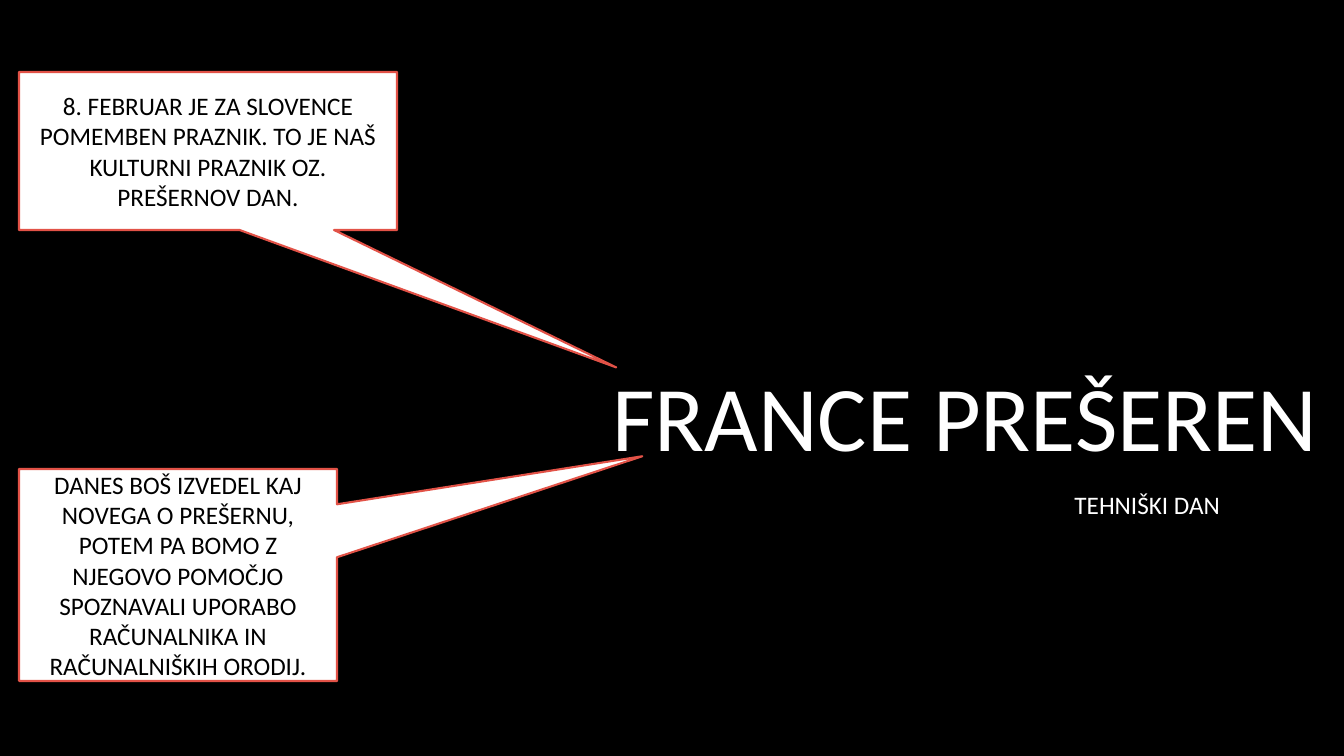
from pptx import Presentation, util as u
from pptx.dml.color import RGBColor
from pptx.enum import shapes, text

PX = 914400 / 100.8
THEME = {
    "font": "Calibri",
    "background": RGBColor.from_string("000000"),
    "light": RGBColor.from_string("FFFFFF"),
    "dark": RGBColor.from_string("000000"),
    "outline": RGBColor.from_string("E25247"),
    "title_size": u.Pt(66),
    "body_size": u.Pt(18),
}


def px(*lengths):
    return [round(length * PX) for length in lengths]


def write(frame, wording, size, color, align, anchor):
    frame.word_wrap = True
    frame.vertical_anchor = anchor
    frame.text = wording
    paragraph = frame.paragraphs[0]
    paragraph.alignment = align
    font = paragraph.runs[0].font
    font.name, font.size = THEME["font"], size
    font.color.rgb = color


deck = Presentation()
deck.slide_width, deck.slide_height = px(1344, 756)
slide = deck.slides.add_slide(deck.slide_layouts[6])
slide.background.fill.solid()
slide.background.fill.fore_color.rgb = THEME["background"]

headings = [
    ("FRANCE PREŠEREN", (535, 203, 793, 267), THEME["title_size"], text.MSO_ANCHOR.BOTTOM),
    ("TEHNIŠKI DAN", (437, 484, 793, 155), THEME["body_size"], text.MSO_ANCHOR.TOP),
]
for wording, place, size, anchor in headings:
    heading = slide.shapes.add_textbox(*px(*place))
    write(heading.text_frame, wording, size, THEME["light"], text.PP_ALIGN.RIGHT, anchor)
    if anchor == text.MSO_ANCHOR.BOTTOM:
        heading.text_frame.margin_bottom = 0

# Each tail gives the callout tip as a share of the box, from its centre.
callouts = [
    ("8. FEBRUAR JE ZA SLOVENCE POMEMBEN PRAZNIK. TO JE NAŠ KULTURNI PRAZNIK OZ. "
     "PREŠERNOV DAN.", (19, 72, 378, 158), (1.08, 1.37)),
    ("DANES BOŠ IZVEDEL KAJ NOVEGA O PREŠERNU, POTEM PA BOMO Z NJEGOVO POMOČJO "
     "SPOZNAVALI UPORABO RAČUNALNIKA IN RAČUNALNIŠKIH ORODIJ.",
     (19, 469, 318, 212), (1.46, -0.56)),
]
for wording, place, tail in callouts:
    callout = slide.shapes.add_shape(
        shapes.MSO_SHAPE.RECTANGULAR_CALLOUT, *px(*place))
    callout.adjustments[0], callout.adjustments[1] = tail
    callout.shadow.inherit = False
    callout.fill.solid()
    callout.fill.fore_color.rgb = THEME["light"]
    callout.line.color.rgb = THEME["outline"]
    callout.line.width = u.Pt(1.5)
    write(callout.text_frame, wording, THEME["body_size"], THEME["dark"],
          text.PP_ALIGN.CENTER, text.MSO_ANCHOR.MIDDLE)

deck.save("out.pptx")
